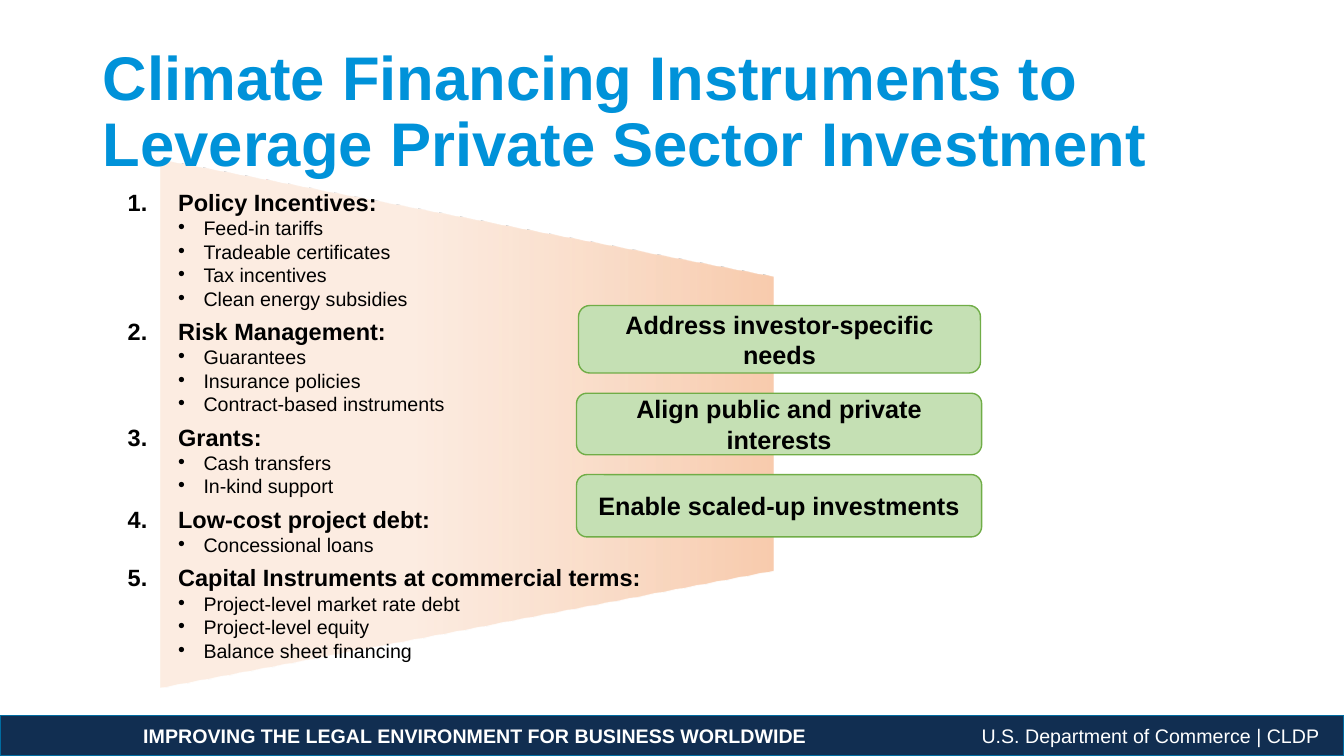
from dataclasses import dataclass
from lxml.etree import SubElement
from pptx import Presentation
from pptx.dml.color import RGBColor
from pptx.enum.shapes import MSO_SHAPE
from pptx.enum.text import MSO_ANCHOR, PP_ALIGN
from pptx.oxml.ns import qn
from pptx.util import Cm, Pt

TITLE = "Climate Financing Instruments to Leverage Private Sector Investment"
INSTRUMENTS = [
    ("Policy Incentives:", ["Feed-in tariffs", "Tradeable certificates",
                            "Tax incentives", "Clean energy subsidies"]),
    ("Risk Management:", ["Guarantees", "Insurance policies",
                          "Contract-based instruments"]),
    ("Grants:", ["Cash transfers", "In-kind support"]),
    ("Low-cost project debt:", ["Concessional loans"]),
    ("Capital Instruments at commercial terms:",
     ["Project-level market rate debt", "Project-level equity",
      "Balance sheet financing"]),
]
# Text, then left, top, width, height in centimetres
GOALS = [
    ("Address investor-specific needs", (14.58, 7.7, 10.13, 1.7)),
    ("Align public and private interests", (14.53, 9.91, 10.21, 1.55)),
    ("Enable scaled-up investments", (14.53, 11.96, 10.21, 1.57)),
]
FOOTER_SLOGAN = "IMPROVING THE LEGAL ENVIRONMENT FOR BUSINESS WORLDWIDE"
FOOTER_OWNER = "U.S. Department of Commerce | CLDP"
SLIDE_WIDTH, SLIDE_HEIGHT, FOOTER_HEIGHT = 33.87, 19.05, 1.02


@dataclass(frozen=True)
class Theme:
    font: str = "Arial"
    title: str = "0092D9"
    text: str = "000000"
    white: str = "FFFFFF"
    footer: str = "112E51"
    footer_line: str = "006CA1"
    goal: str = "C5E0B4"
    goal_line: str = "70AD47"
    funnel_dark: str = "F8CBAD"
    funnel_light: str = "FBE5D6"
    title_size: float = 44
    heading_size: float = 16.8
    goal_size: float = 18
    small_size: float = 14


THEME = Theme()


def add_run(paragraph, text, size, color=THEME.text, bold=False):
    run = paragraph.add_run()
    run.text = text
    run.font.name = THEME.font
    run.font.size = Pt(size)
    run.font.bold = bold
    run.font.color.rgb = RGBColor.from_string(color)


def add_text_frame(slide, box):
    frame = slide.shapes.add_textbox(*map(Cm, box)).text_frame
    frame.word_wrap = True
    return frame


def add_filled_shape(slide, kind, box, fill, line):
    shape = slide.shapes.add_shape(kind, *map(Cm, box))
    shape.shadow.inherit = False
    shape.fill.solid()
    shape.fill.fore_color.rgb = RGBColor.from_string(fill)
    shape.line.color.rgb = RGBColor.from_string(line)
    shape.line.width = Pt(1)
    shape.text_frame.word_wrap = True
    shape.text_frame.vertical_anchor = MSO_ANCHOR.MIDDLE
    return shape


def add_footer(slide):
    box = (0, SLIDE_HEIGHT - FOOTER_HEIGHT, SLIDE_WIDTH, FOOTER_HEIGHT)
    shape = add_filled_shape(slide, MSO_SHAPE.RECTANGLE, box,
                             THEME.footer, THEME.footer_line)
    paragraph = shape.text_frame.paragraphs[0]
    paragraph.alignment = PP_ALIGN.LEFT
    tabs = SubElement(paragraph._p.get_or_add_pPr(), qn("a:tabLst"))
    for position, alignment in ((3.36, "l"), (33.01, "r")):
        SubElement(tabs, qn("a:tab"), pos=str(Cm(position)), algn=alignment)
    add_run(paragraph, "\t" + FOOTER_SLOGAN, THEME.small_size, THEME.white, True)
    add_run(paragraph, "\t" + FOOTER_OWNER, THEME.small_size, THEME.white)


def add_funnel(slide):
    """Trapezoid turned on its side, fading from its narrow right end."""
    shape = slide.shapes.add_shape(MSO_SHAPE.TRAPEZOID, Cm(5.11), Cm(2.95),
                                   Cm(13.31), Cm(15.44))
    shape.shadow.inherit = False
    shape.line.fill.background()
    shape.adjustments[0] = 0.222
    shape.rotation = 270
    properties = shape._element.spPr
    properties.find(qn("a:xfrm")).set("flipV", "1")
    shape.fill.gradient()
    gradient = properties.find(qn("a:gradFill"))
    for child in list(gradient):
        gradient.remove(child)
    gradient.set("rotWithShape", "1")
    stops = SubElement(gradient, qn("a:gsLst"))
    for position, color, opacity in ((0, THEME.funnel_dark, 100),
                                     (59, THEME.funnel_light, 72)):
        stop = SubElement(stops, qn("a:gs"), pos=str(position * 1000))
        fill = SubElement(stop, qn("a:srgbClr"), val=color)
        if opacity < 100:
            SubElement(fill, qn("a:alpha"), val=str(opacity * 1000))
    SubElement(gradient, qn("a:lin"), ang=str(90 * 60000), scaled="0")


def add_title(slide):
    frame = add_text_frame(slide, (2.34, 1.02, 29.21, 3.68))
    frame.vertical_anchor = MSO_ANCHOR.MIDDLE
    paragraph = frame.paragraphs[0]
    paragraph.line_spacing = 0.9
    add_run(paragraph, TITLE, THEME.title_size, THEME.title, True)


def add_list_paragraph(frame, number, text):
    """Add a numbered heading, or a bullet when number is None."""
    first = not frame.paragraphs[0].runs
    paragraph = frame.paragraphs[0] if first else frame.add_paragraph()
    properties = paragraph._p.get_or_add_pPr()
    margin, hanging = (1.27, 1.27) if number else (1.91, 0.64)
    properties.set("marL", str(Cm(margin)))
    properties.set("indent", str(-Cm(hanging)))
    if number:
        SubElement(properties, qn("a:buFont"), typeface=THEME.font)
        SubElement(properties, qn("a:buAutoNum"), type="arabicPeriod",
                   startAt=str(number))
        paragraph.line_spacing = 0.7
        paragraph.space_before = Pt(0 if first else 11)
        add_run(paragraph, text, THEME.heading_size, bold=True)
    else:
        SubElement(properties, qn("a:buFont"), typeface=THEME.font)
        SubElement(properties, qn("a:buChar"), char="•")
        paragraph.line_spacing = 0.64
        paragraph.space_before = Pt(6)
        add_run(paragraph, text, THEME.small_size)


def add_instruments(slide):
    frame = add_text_frame(slide, (2.97, 4.8, 19.84, 12.09))
    for number, (heading, examples) in enumerate(INSTRUMENTS, 1):
        add_list_paragraph(frame, number, heading)
        for example in examples:
            add_list_paragraph(frame, None, example)


def add_goals(slide):
    for text, box in GOALS:
        shape = add_filled_shape(slide, MSO_SHAPE.ROUNDED_RECTANGLE, box,
                                 THEME.goal, THEME.goal_line)
        paragraph = shape.text_frame.paragraphs[0]
        paragraph.alignment = PP_ALIGN.CENTER
        add_run(paragraph, text, THEME.goal_size, bold=True)


def main():
    presentation = Presentation()
    presentation.slide_width = Cm(SLIDE_WIDTH)
    presentation.slide_height = Cm(SLIDE_HEIGHT)
    slide = presentation.slides.add_slide(presentation.slide_layouts[6])
    add_footer(slide)
    add_funnel(slide)
    add_title(slide)
    add_instruments(slide)
    add_goals(slide)
    presentation.save("out.pptx")


if __name__ == "__main__":
    main()
